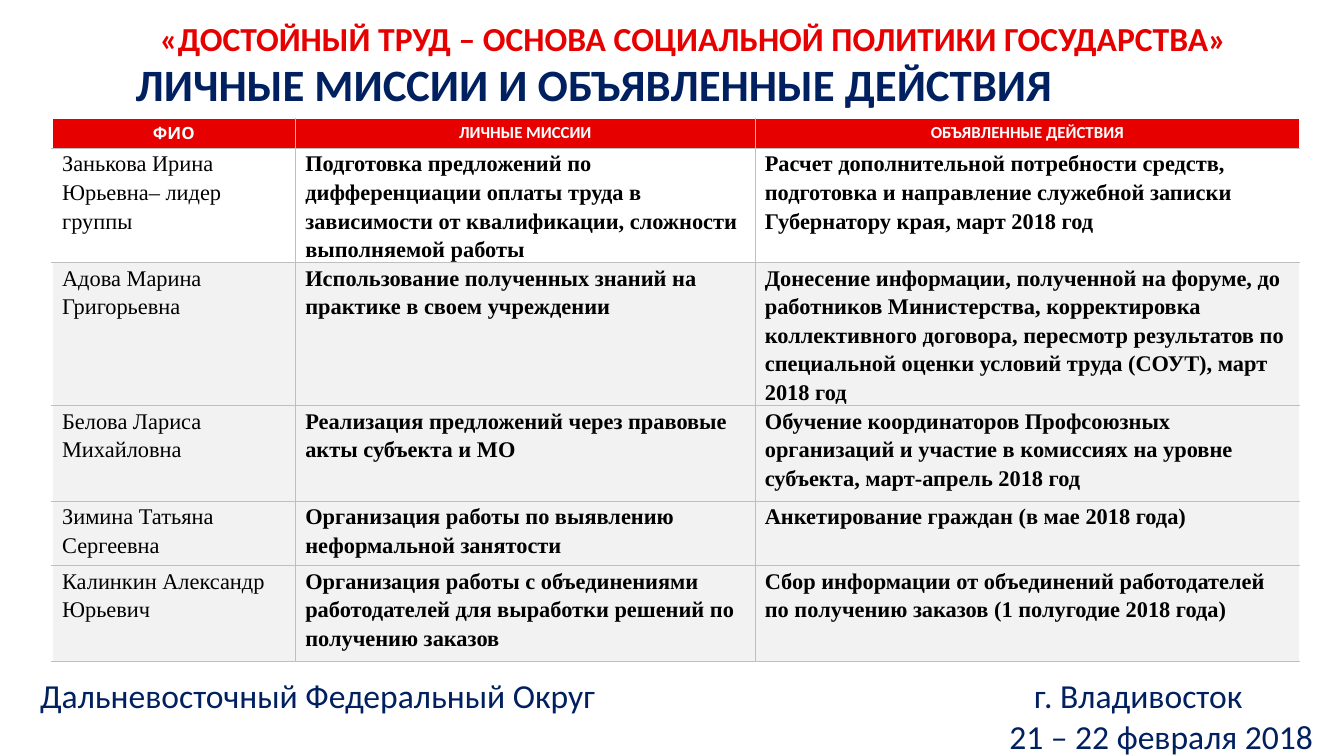
"""Build the slide listing personal missions and declared actions of the group."""
from lxml.etree import SubElement
from pptx import Presentation
from pptx.dml.color import RGBColor
from pptx.enum.text import MSO_ANCHOR as Anchor, MSO_AUTO_SIZE as AutoSize, PP_ALIGN as Align
from pptx.oxml.ns import qn
from pptx.util import Pt

COLORS = {"red": "E60000", "navy": "002060", "white": "FFFFFF", "black": "000000",
          "band": "F2F2F2", "rule": "BFBFBF"}
HEADINGS = ["ФИО", "ЛИЧНЫЕ МИССИИ", "ОБЪЯВЛЕННЫЕ ДЕЙСТВИЯ"]
MEMBERS = [
    ("Занькова Ирина Юрьевна– лидер группы",
     "Подготовка предложений по дифференциации оплаты труда в зависимости от квалификации, "
     "сложности выполняемой работы",
     "Расчет дополнительной потребности средств, подготовка и направление служебной записки "
     "Губернатору края, март 2018 год"),
    ("Адова Марина Григорьевна",
     "Использование полученных знаний на практике в своем учреждении",
     "Донесение информации, полученной на форуме, до работников Министерства, корректировка "
     "коллективного договора, пересмотр результатов по специальной оценки условий труда (СОУТ), "
     "март 2018 год"),
    ("Белова Лариса Михайловна",
     "Реализация предложений через правовые акты субъекта и МО",
     "Обучение координаторов Профсоюзных организаций и участие в комиссиях на уровне субъекта, "
     "март-апрель 2018 год"),
    ("Зимина Татьяна Сергеевна",
     "Организация работы по выявлению неформальной занятости",
     "Анкетирование граждан (в мае 2018 года)"),
    ("Калинкин Александр Юрьевич",
     "Организация работы с объединениями работодателей для выработки решений по получению заказов",
     "Сбор информации от объединений работодателей по получению заказов (1 полугодие 2018 года)"),
]
COLUMN_WIDTHS = [130.3, 246.2, 291.7]
ROW_HEIGHTS = [16, 56, 68.4, 51.2, 34.5, 51.2]


def style(paragraph, size, color, bold=False, name="Calibri", align=Align.LEFT):
    font = paragraph.font
    font.size, font.bold, font.name = Pt(size), bold, name
    font.color.rgb = RGBColor.from_string(COLORS[color])
    paragraph.alignment = align


def add_rule(cell, side):
    line = SubElement(cell._tc.get_or_add_tcPr(), qn(f"a:{side}"), w=str(Pt(0.5)))
    SubElement(SubElement(line, qn("a:solidFill")), qn("a:srgbClr"), val=COLORS["rule"])


prs = Presentation()
prs.slide_width, prs.slide_height = Pt(720), Pt(405)
slide = prs.slides.add_slide(prs.slide_layouts[5])

title = slide.shapes.title
title.left, title.top, title.width, title.height = Pt(65.5), Pt(26.6), Pt(510.5), Pt(36)
title.text_frame.text = "ЛИЧНЫЕ МИССИИ И ОБЪЯВЛЕННЫЕ ДЕЙСТВИЯ"
title.text_frame.auto_size = AutoSize.NONE
title.text_frame.word_wrap = False
title.text_frame.vertical_anchor = Anchor.TOP
style(title.text_frame.paragraphs[0], 24, "navy", bold=True)

missions = slide.shapes.add_table(len(ROW_HEIGHTS), len(COLUMN_WIDTHS), Pt(28), Pt(63.4),
                                  Pt(sum(COLUMN_WIDTHS)), Pt(sum(ROW_HEIGHTS))).table
missions.horz_banding = False
for column, width in zip(missions.columns, COLUMN_WIDTHS):
    column.width = Pt(width)
for row, height in zip(missions.rows, ROW_HEIGHTS):
    row.height = Pt(height)

for r, texts in enumerate([HEADINGS, *MEMBERS]):
    for c, text in enumerate(texts):
        cell = missions.cell(r, c)
        cell.text = text
        cell.margin_left = cell.margin_right = Pt(5.3)
        cell.margin_top = cell.margin_bottom = Pt(0 if r else 2)
        cell.vertical_anchor = Anchor.TOP if r else Anchor.MIDDLE
        if c > 0:
            add_rule(cell, "lnL")
        if c < len(COLUMN_WIDTHS) - 1:
            add_rule(cell, "lnR")
        if r > 0:
            add_rule(cell, "lnT")
        add_rule(cell, "lnB")
        if r == 1:
            cell.fill.background()
        else:
            cell.fill.solid()
            cell.fill.fore_color.rgb = RGBColor.from_string(COLORS["band" if r else "red"])
        entry = cell.text_frame.paragraphs[0]
        if r:
            style(entry, 12, "black", bold=c > 0, name="Times New Roman")
            entry.line_spacing = 1.15
        else:
            style(entry, 9, "white", bold=True, name="Calibri" if c else "Cabin",
                  align=Align.CENTER)

venue = slide.shapes.add_textbox(Pt(14.4), Pt(367.2), Pt(696.2), Pt(32.4)).text_frame
venue.word_wrap = True
venue.vertical_anchor = Anchor.MIDDLE
venue.text = "Дальневосточный Федеральный Округ\tг. Владивосток\n21 – 22 февраля 2018"
place, dates = venue.paragraphs
style(place, 18, "navy")
style(dates, 18, "navy", align=Align.RIGHT)
tabs = SubElement(place._p.get_or_add_pPr(), qn("a:tabLst"))
place._p.pPr.find(qn("a:defRPr")).addprevious(tabs)
SubElement(tabs, qn("a:tab"), pos=str(Pt(532.5)), algn="l")

motto = slide.shapes.add_textbox(Pt(65.5), Pt(9.4), Pt(612), Pt(21.6)).text_frame
motto.word_wrap = True
motto.vertical_anchor = Anchor.MIDDLE
motto.text = "«ДОСТОЙНЫЙ ТРУД – ОСНОВА СОЦИАЛЬНОЙ ПОЛИТИКИ ГОСУДАРСТВА»"
style(motto.paragraphs[0], 18, "red", bold=True, align=Align.CENTER)

prs.save("out.pptx")
